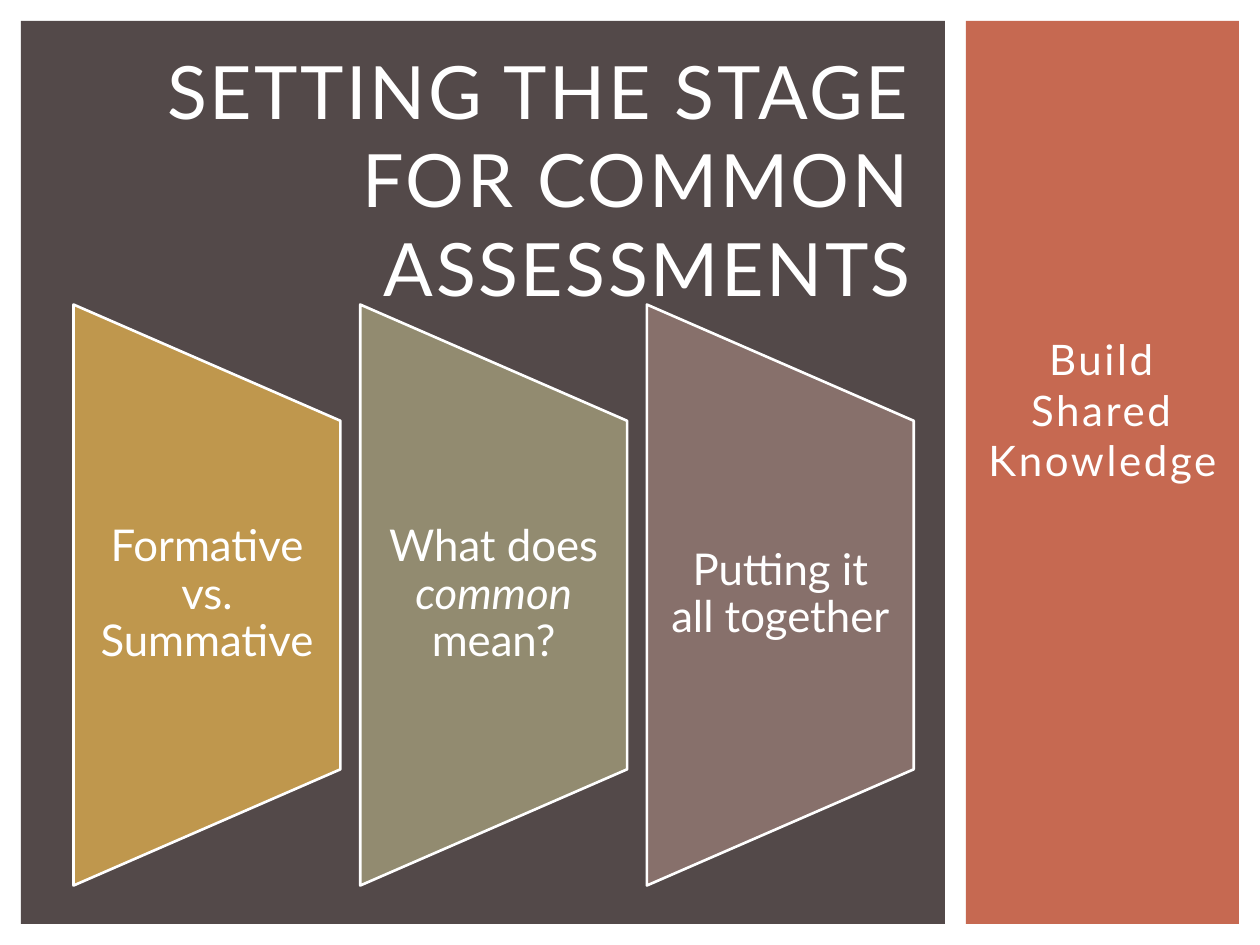
from pptx import Presentation
from pptx.dml.color import RGBColor
from pptx.enum.shapes import MSO_SHAPE
from pptx.enum.text import MSO_ANCHOR, PP_ALIGN
from pptx.util import Pt

RECTANGLE = MSO_SHAPE.RECTANGLE
TRAPEZOID = MSO_SHAPE.FLOWCHART_MANUAL_OPERATION
MIDDLE = MSO_ANCHOR.MIDDLE
CENTER, RIGHT = PP_ALIGN.CENTER, PP_ALIGN.RIGHT

WHITE = RGBColor(0xFF, 0xFF, 0xFF)
BROWN = RGBColor(0x53, 0x49, 0x49)
RUST = RGBColor(0xC6, 0x69, 0x51)
GOLD = RGBColor(0xBF, 0x97, 0x4D)
OLIVE = RGBColor(0x92, 0x8B, 0x70)
MAUVE = RGBColor(0x87, 0x70, 0x6B)

presentation = Presentation()
presentation.slide_width, presentation.slide_height = Pt(720), Pt(540)
slide = presentation.slides.add_slide(presentation.slide_layouts[6])


def add_filled_shape(kind, left, top, width, height, color):
    shape = slide.shapes.add_shape(kind, Pt(left), Pt(top), Pt(width), Pt(height))
    shape.shadow.inherit = False
    shape.fill.solid()
    shape.fill.fore_color.rgb = color
    shape.line.fill.background()
    return shape


def add_text(left, top, width, height, runs, size, alignment, spacing=0):
    """Add a wrapped text box; runs are (text, italic) pairs."""
    box = slide.shapes.add_textbox(Pt(left), Pt(top), Pt(width), Pt(height))
    box.text_frame.word_wrap = True
    box.text_frame.vertical_anchor = MIDDLE
    paragraph = box.text_frame.paragraphs[0]
    paragraph.alignment = alignment
    for text, italic in runs:
        run = paragraph.add_run()
        run.text = text
        run.font.name = "Lato"
        run.font.size = Pt(size)
        run.font.italic = italic
        run.font.color.rgb = WHITE
        if spacing:
            run._r.get_or_add_rPr().set("spc", str(spacing))
    return box.text_frame


# Background panels
add_filled_shape(RECTANGLE, 552, 12, 156, 516, RUST)
add_filled_shape(RECTANGLE, 12, 12, 528, 516, BROWN)

# Subtitle and title, letter spacing in hundredths of a point
add_text(552, 162, 156, 144, [("Build Shared Knowledge", False)], 24, CENTER, 150)
add_text(30, 30, 498, 144, [("SETTING THE STAGE FOR COMMON ASSESSMENTS", False)],
         42, RIGHT, 150)

# Three trapezoid cards, turned so that the wide side is on the left
CARDS = [
    (GOLD, [("Formative vs. Summative", False)]),
    (OLIVE, [("What does ", False), ("common ", True), ("mean?", False)]),
    (MAUVE, [("Putting it all together", False)]),
]
CARD_WIDTH, CARD_HEIGHT, TEXT_HEIGHT = 152.5, 332, 199.2
FIRST_CENTER, CARD_PITCH, CENTER_Y = 118.3, 163.8, 340

for index, (color, runs) in enumerate(CARDS):
    center_x = FIRST_CENTER + index * CARD_PITCH
    card = add_filled_shape(TRAPEZOID, center_x - CARD_HEIGHT / 2,
                            CENTER_Y - CARD_WIDTH / 2, CARD_HEIGHT, CARD_WIDTH, color)
    card.rotation = 270
    card.line.color.rgb = WHITE
    card.line.width = Pt(1.5)

    frame = add_text(center_x - CARD_WIDTH / 2, CENTER_Y - TEXT_HEIGHT / 2,
                     CARD_WIDTH, TEXT_HEIGHT, runs, 25, CENTER)
    frame.margin_left = frame.margin_right = Pt(12.5)
    frame.margin_top = frame.margin_bottom = 0
    frame.paragraphs[0].line_spacing = 0.9

presentation.save("out.pptx")
